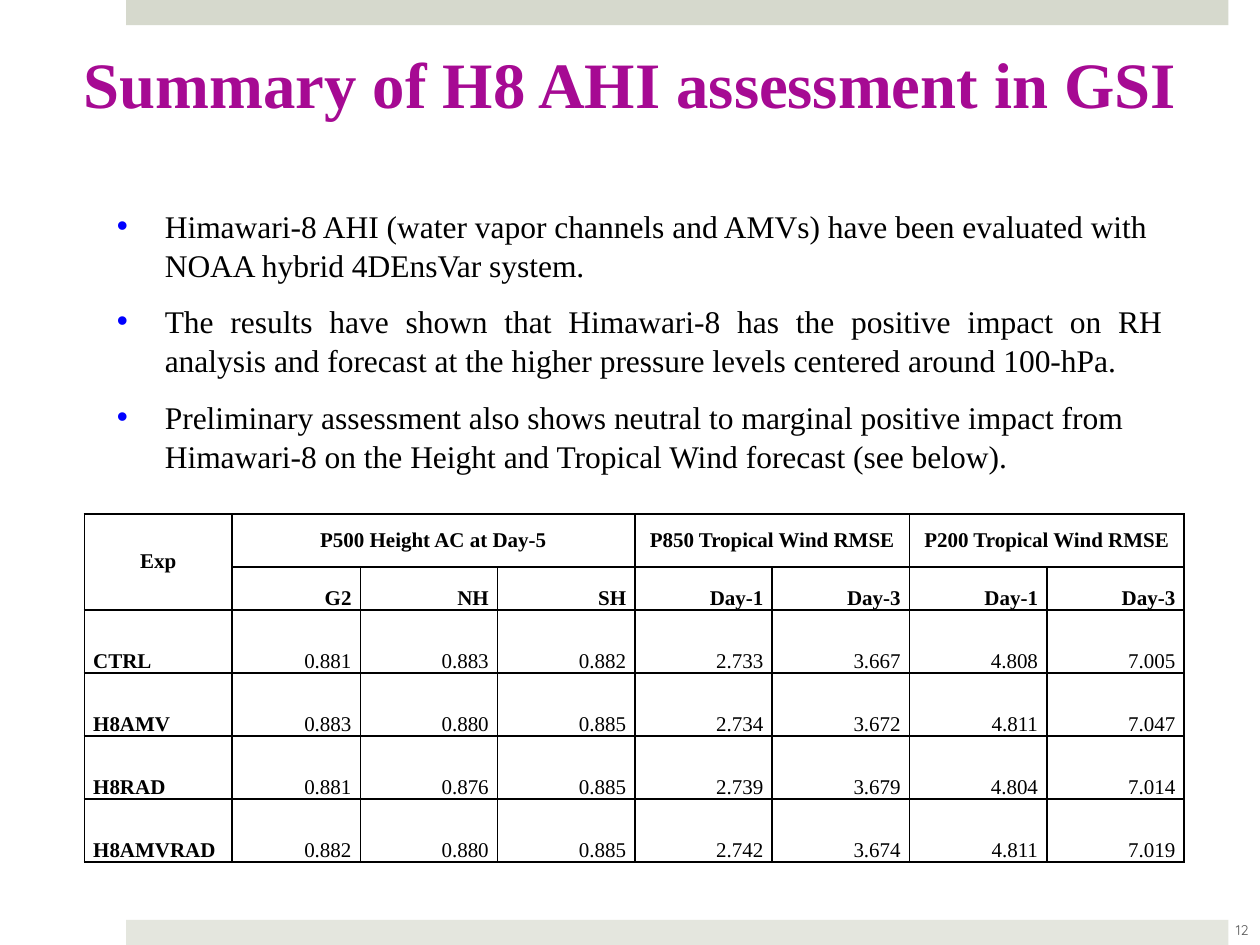
from lxml.etree import SubElement
from pptx import Presentation
from pptx.dml.color import RGBColor
from pptx.enum.shapes import MSO_SHAPE
from pptx.enum.text import MSO_ANCHOR, PP_ALIGN
from pptx.oxml import parse_xml
from pptx.oxml.ns import nsdecls, qn
from pptx.util import Inches, Pt

BLACK = RGBColor(0x00, 0x00, 0x00)
PURPLE = RGBColor(0xA6, 0x0A, 0x93)
GRAY = RGBColor(0x59, 0x59, 0x59)
BULLET = RGBColor(0x00, 0x00, 0xFF)
TOP_BAND = RGBColor(0xD6, 0xD9, 0xCD)
BOTTOM_BAND = RGBColor(0xE4, 0xE6, 0xDE)
SERIF = "Times New Roman"


def format_text(p, size, color=BLACK, bold=False, align=PP_ALIGN.LEFT, font=SERIF):
    p.alignment = align
    for r in p.runs:
        r.font.name = font
        r.font.size = Pt(size)
        r.font.bold = bold
        r.font.color.rgb = color


def add_text(s, x, y, w, h, lines):
    tf = s.shapes.add_textbox(Inches(x), Inches(y), Inches(w), Inches(h)).text_frame
    tf.word_wrap = True
    tf.text = "\n".join(lines)
    return tf


prs = Presentation()
prs.slide_width, prs.slide_height = Inches(10), Inches(7.5)
s = prs.slides.add_slide(prs.slide_layouts[6])

for y, color in ((0, TOP_BAND), (7.3, BOTTOM_BAND)):
    sp = s.shapes.add_shape(MSO_SHAPE.RECTANGLE, Inches(1), Inches(y), Inches(8.75), Inches(0.2))
    sp.shadow.inherit = False
    sp.fill.solid()
    sp.fill.fore_color.rgb = color
    sp.line.fill.background()

tf = add_text(s, 9.61, 7.18, 0.5, 0.4, ["12"])
tf.vertical_anchor = MSO_ANCHOR.MIDDLE
format_text(tf.paragraphs[0], 8, GRAY, align=PP_ALIGN.CENTER, font="Quicksand")

points = [
    "Himawari-8 AHI (water vapor channels and AMVs) have been evaluated with NOAA hybrid 4DEnsVar system.",
    "The results have shown that Himawari-8 has the positive impact on RH analysis and forecast at the higher pressure levels centered around 100-hPa.",
    "Preliminary assessment also shows neutral to marginal positive impact from Himawari-8 on the Height and Tropical Wind forecast (see below).",
]
tf = add_text(s, 0.33, 1.58, 9, 2.51, points)
for p, align in zip(tf.paragraphs, (PP_ALIGN.LEFT, PP_ALIGN.JUSTIFY, PP_ALIGN.LEFT)):
    format_text(p, 18, align=align)
    p.level = 1
    p.line_spacing = 1.04
    p.space_before, p.space_after = Pt(3.6), Pt(6)
    pPr = p._p.get_or_add_pPr()
    pPr.set("marL", str(Inches(0.88)))
    pPr.set("indent", str(Inches(-0.38)))
    SubElement(SubElement(pPr, qn("a:buClr")), qn("a:srgbClr")).set("val", str(BULLET))
    SubElement(pPr, qn("a:buFont")).set("typeface", "Arial")
    SubElement(pPr, qn("a:buChar")).set("char", "•")

tf = add_text(s, 0.5, 0.3, 9, 1.25, ["Summary of H8 AHI assessment in GSI"])
format_text(tf.paragraphs[0], 37, PURPLE, True, PP_ALIGN.CENTER)

rows = [
    ["Exp", "P500 Height AC at Day-5", "", "", "P850 Tropical Wind RMSE", "", "P200 Tropical Wind RMSE", ""],
    ["", "G2", "NH", "SH", "Day-1", "Day-3", "Day-1", "Day-3"],
    ["CTRL", "0.881", "0.883", "0.882", "2.733", "3.667", "4.808", "7.005"],
    ["H8AMV", "0.883", "0.880", "0.885", "2.734", "3.672", "4.811", "7.047"],
    ["H8RAD", "0.881", "0.876", "0.885", "2.739", "3.679", "4.804", "7.014"],
    ["H8AMVRAD", "0.882", "0.880", "0.885", "2.742", "3.674", "4.811", "7.019"],
]
col_widths = [1.17, 1.02] + [1.09] * 6
row_heights = [0.42, 0.34] + [0.5] * 4
table = s.shapes.add_table(len(rows), len(col_widths), Inches(0.67), Inches(4.08),
                           Inches(8.75), Inches(2.75)).table
table.first_row = table.horz_banding = False
for col, width in zip(table.columns, col_widths):
    col.width = Inches(width)
for row, height in zip(table.rows, row_heights):
    row.height = Inches(height)

for i, row in enumerate(rows):
    for j, value in enumerate(row):
        cell = table.cell(i, j)
        cell.text = value
        cell.margin_left = cell.margin_right = Inches(0.07)
        cell.margin_top = cell.margin_bottom = 0
        cell.vertical_anchor = MSO_ANCHOR.MIDDLE if i == 0 else MSO_ANCHOR.BOTTOM
        align = PP_ALIGN.CENTER if i == 0 else PP_ALIGN.LEFT if j == 0 else PP_ALIGN.RIGHT
        format_text(cell.text_frame.paragraphs[0], 12, bold=i < 2 or j == 0, align=align)
        cell.fill.background()
        tcPr = cell._tc.get_or_add_tcPr()
        for k, side in enumerate(("lnL", "lnR", "lnT", "lnB")):
            tcPr.insert(k, parse_xml(
                f'<a:{side} {nsdecls("a")} w="{Pt(1)}"><a:solidFill>'
                f'<a:srgbClr val="{BLACK}"/></a:solidFill></a:{side}>'))

for top, left, bottom, right in ((0, 0, 1, 0), (0, 1, 0, 3), (0, 4, 0, 5), (0, 6, 0, 7)):
    table.cell(top, left).merge(table.cell(bottom, right))

prs.save("out.pptx")
